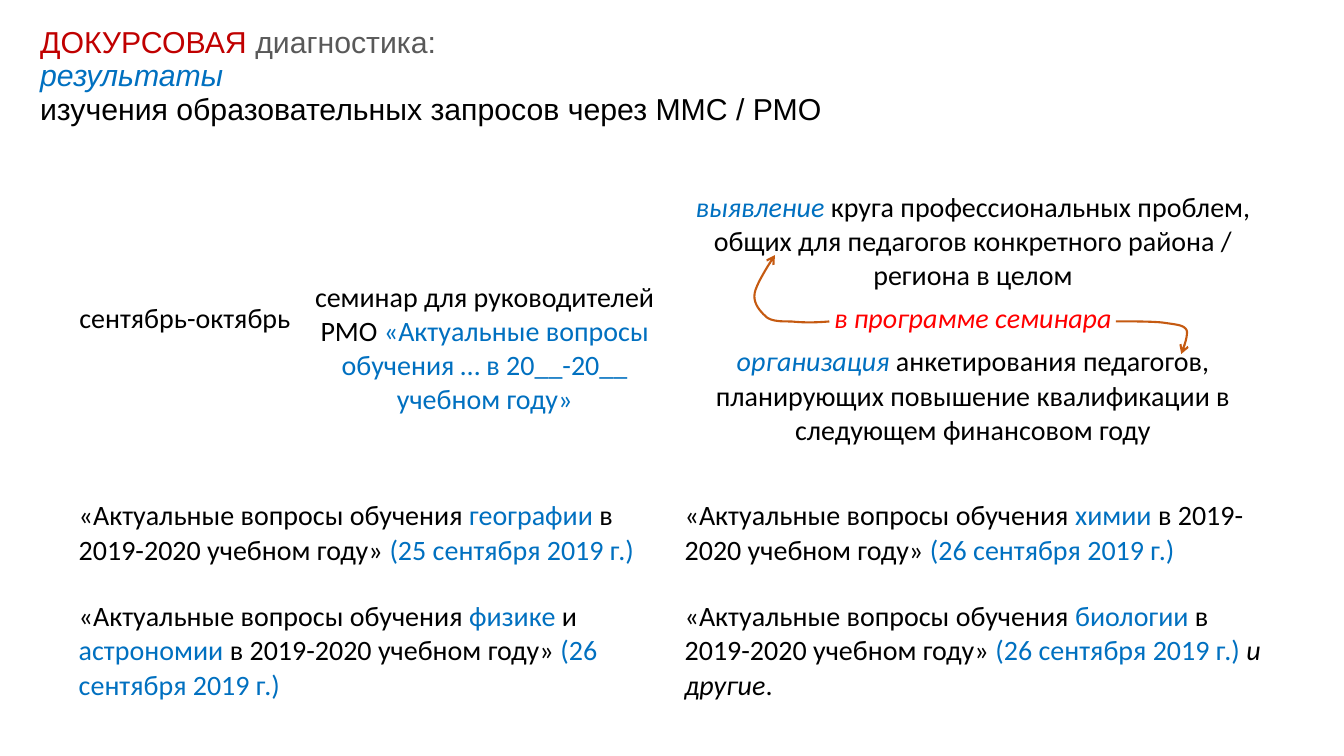
import dataclasses

import pptx
import pptx.dml.color
import pptx.enum.text
import pptx.oxml
import pptx.oxml.ns
import pptx.util
from pptx.util import Cm


@dataclasses.dataclass(frozen=True)
class Theme:
    black: str = "000000"
    white: str = "FFFFFF"
    blue: str = "0070C0"
    crimson: str = "C00000"
    gray: str = "595959"
    red: str = "FF0000"
    arrow: str = "C55A11"
    title_font: str = "Arial"
    body_font: str = "Calibri"
    title_size: float = 21.6
    body_size: float = 20
    arrow_width: float = 1.5


THEME = Theme()
CENTER = pptx.enum.text.PP_ALIGN.CENTER
LEFT = pptx.enum.text.PP_ALIGN.LEFT
MIDDLE = pptx.enum.text.MSO_ANCHOR.MIDDLE
CURVE_STEPS = 10


def rgb(code):
    return pptx.dml.color.RGBColor.from_string(code)


def add_text(paragraph, text, *, color=THEME.black, italic=False,
             font=THEME.body_font, size=THEME.body_size):
    run = paragraph.add_run()
    run.text = text
    run.font.name = font
    run.font.size = pptx.util.Pt(size)
    run.font.italic = italic
    run.font.color.rgb = rgb(color)


def blue(text, italic=False):
    return text, {"color": THEME.blue, "italic": italic}


def plain(text):
    return text, {}


def add_title(slide, lines):
    box = slide.shapes.add_textbox(Cm(0.76), Cm(0.51), Cm(29.21), Cm(3.66))
    frame = box.text_frame
    frame.word_wrap = True
    frame.margin_top = Cm(0.15)
    for number, line in enumerate(lines):
        paragraph = frame.add_paragraph() if number else frame.paragraphs[0]
        paragraph.line_spacing = 0.93
        for text, style in line:
            add_text(paragraph, text, font=THEME.title_font,
                     size=THEME.title_size, **style)


def add_grid(slide, left, top, widths, row_height, rows, align):
    """Each cell is a list of (text, format) runs; an empty list is a blank cell."""
    frame = slide.shapes.add_table(len(rows), len(widths), Cm(left), Cm(top),
                                   Cm(sum(widths)), Cm(row_height * len(rows)))
    table = frame.table
    table.first_row = table.horz_banding = False
    for column, width in zip(table.columns, widths):
        column.width = Cm(width)
    for row_index, row in enumerate(rows):
        for column_index, runs in enumerate(row):
            cell = table.cell(row_index, column_index)
            cell.fill.solid()
            cell.fill.fore_color.rgb = rgb(THEME.white)
            paragraph = cell.text_frame.paragraphs[0]
            paragraph.alignment = align
            for text, style in runs:
                add_text(paragraph, text, **style)
    return table


def curve_points(start, segments):
    """Sample a chain of cubic curves, each given by two controls and an end."""
    points = [start]
    for control_a, control_b, end in segments:
        for step in range(1, CURVE_STEPS + 1):
            t = step / CURVE_STEPS
            weights = ((1 - t) ** 3, 3 * t * (1 - t) ** 2,
                       3 * t ** 2 * (1 - t), t ** 3)
            anchors = (start, control_a, control_b, end)
            points.append(tuple(sum(w * p[axis] for w, p in zip(weights, anchors))
                                for axis in (0, 1)))
        start = end
    return points


def add_curved_arrow(slide, start, segments):
    first, *others = [(Cm(x), Cm(y)) for x, y in curve_points(start, segments)]
    builder = slide.shapes.build_freeform(*first)
    builder.add_line_segments(others, close=False)
    arrow = builder.convert_to_shape()
    arrow.shadow.inherit = False
    arrow.fill.background()
    arrow.line.color.rgb = rgb(THEME.arrow)
    arrow.line.width = pptx.util.Pt(THEME.arrow_width)
    outline = arrow.element.spPr.find(pptx.oxml.ns.qn("a:ln"))
    outline.append(pptx.oxml.parse_xml(
        f'<a:tailEnd {pptx.oxml.ns.nsdecls("a")} type="arrow"/>'))


def topic(*subject, date):
    return [plain("«Актуальные вопросы обучения "), *subject,
            plain(" в 2019-2020 учебном году» "), blue(f"({date} сентября 2019 г.)")]


def main():
    deck = pptx.Presentation()
    deck.slide_width, deck.slide_height = Cm(33.87), Cm(19.05)
    slide = deck.slides.add_slide(deck.slide_layouts[6])

    # Title
    add_title(slide, [
        [("ДОКУРСОВАЯ ", {"color": THEME.crimson}),
         ("диагностика:", {"color": THEME.gray})],
        [blue("результаты", italic=True)],
        [plain("изучения образовательных запросов через ММС / РМО")],
    ])

    # Seminar plan: period, event, goals
    event = [plain("семинар для руководителей РМО "),
             blue("«Актуальные вопросы обучения … в 20__-20__ учебном году»")]
    finding = [blue("выявление", italic=True),
               plain(" круга профессиональных проблем, общих для педагогов "
                     "конкретного района / региона в целом")]
    program = [("в программе семинара", {"color": THEME.red, "italic": True})]
    survey = [blue("организация", italic=True),
              plain(" анкетирования педагогов, планирующих повышение "
                    "квалификации в следующем финансовом году")]
    plan = add_grid(slide, 1.7, 4.67, [5.92, 9.19, 15.42], 1.04, [
        [[], event, finding],
        [[plain("сентябрь-октябрь")], [], program],
        [[], [], survey],
    ], CENTER)
    event_cell = plan.cell(0, 1)
    event_cell.merge(plan.cell(2, 1))
    event_cell.vertical_anchor = MIDDLE
    event_cell.margin_top = Cm(0.48)

    # Seminar topics by subject
    biology = topic(blue("биологии"), date=26)
    biology += [(" и другие", {"italic": True}), plain(".")]
    add_grid(slide, 1.73, 12.45, [15.27, 15.27], 2.54, [
        [topic(blue("географии"), date=25), topic(blue("химии"), date=26)],
        [topic(blue("физике"), plain(" и "), blue("астрономии"), date=26), biology],
    ], LEFT)

    # Arrows from the seminar program to both goals
    add_curved_arrow(slide, (20.9, 8.1), [
        ((20.57, 8.13), (20.22, 8.13), (19.94, 8.1)),
        ((19.69, 8.1), (19.48, 8.1), (19.33, 8)),
        ((19.18, 7.87), (18.97, 7.65), (19.02, 7.39)),
        ((19.05, 7.14), (19.53, 6.43), (19.53, 6.43)),
    ])
    add_curved_arrow(slide, (28.12, 8.1), [
        ((28.58, 8.1), (29.03, 8.1), (29.31, 8.13)),
        ((29.62, 8.18), (29.82, 8.18), (29.9, 8.31)),
        ((29.97, 8.43), (29.77, 8.92), (29.77, 8.92)),
    ])

    deck.save("out.pptx")


if __name__ == "__main__":
    main()
